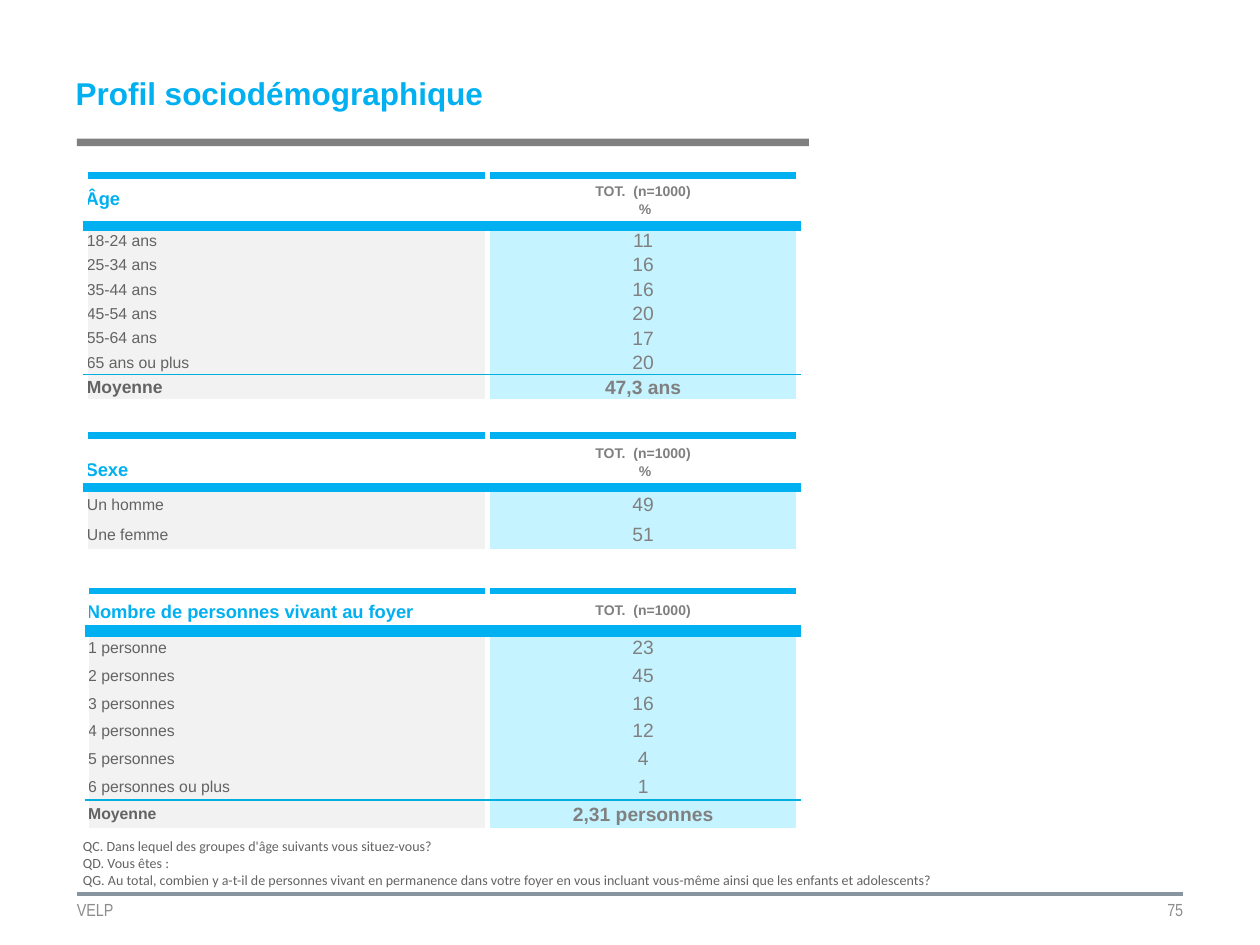
import pptx
import pptx.dml.color
import pptx.enum.shapes
import pptx.enum.text
import pptx.oxml.ns
import pptx.util
from dataclasses import dataclass
from typing import NamedTuple, Optional

from lxml import etree

COLS, ROWS = 1000, 750  # slide grid
CELL = pptx.util.Inches(0.01)
LEFT, RIGHT = 61, 939  # page margins, in grid columns
TABLE_RIGHT, VALUE_COLS = 634, 247
PLAIN_TABLE = "{2D5ABB26-0587-4C30-8999-92F81FD0307C}"
ALIGN = pptx.enum.text.PP_ALIGN
ANCHOR = pptx.enum.text.MSO_ANCHOR


class Style(NamedTuple):
    size: float
    color: str
    bold: bool = False
    font: str = "Arial"


class Border(NamedTuple):
    color: str
    width: float


@dataclass(frozen=True)
class Theme:
    title: Style = Style(18, "00B0F0", True)
    heading: Style = Style(10.5, "00B0F0", True)
    base: Style = Style(8, "7F7F7F", True)
    label: Style = Style(9, "636363")
    value: Style = Style(11, "808080")
    spacer: Style = Style(1, "636363")
    note: Style = Style(8, "636363", font="Calibri")
    footer: Style = Style(10, "8C8C8C", font="Arial Narrow")
    label_fill: str = "F2F2F2"
    value_fill: str = "C5F3FF"
    bar: str = "7F7F7F"
    rule: Border = Border("88959E", 1.5)
    gap: Border = Border("FFFFFF", 3)
    band: Border = Border("00B0F0", 4.5)
    total: Border = Border("00AFDC", 1)


class Box(NamedTuple):
    col: int
    row: int
    cols: int
    rows: int

    def emu(self) -> list[int]:
        return [n * CELL for n in self]


@dataclass(frozen=True)
class Profile:
    """One table; its lengths are in grid columns and rows."""
    heading: str
    base: list[str]
    answers: list[tuple[str, str]]
    left: int
    top: int
    head_rows: int
    spacer_rows: int
    answer_rows: int
    mean: Optional[tuple[str, str]] = None
    mean_rows: int = 0
    mean_size: float = 9
    anchor: ANCHOR = ANCHOR.BOTTOM


THEME = Theme()
BASE = "TOT.  (n=1000)"
PROFILES = [
    Profile("Âge", [BASE, " %"],
            [("18-24 ans", "11"), ("25-34 ans", "16"), ("35-44 ans", "16"),
             ("45-54 ans", "20"), ("55-64 ans", "17"), ("65 ans ou plus", "20")],
            68, 139, 39, 3, 18, ("Moyenne", "47,3 ans"), 19, 10, ANCHOR.MIDDLE),
    Profile("Sexe", [BASE, " %"], [("Un homme", "49"), ("Une femme", "51")],
            68, 346, 40, 2, 24),
    Profile("Nombre de personnes vivant au foyer", [BASE],
            [("1 personne", "23"), ("2 personnes", "45"), ("3 personnes", "16"),
             ("4 personnes", "12"), ("5 personnes", "4"), ("6 personnes ou plus", "1")],
            69, 469, 30, 4, 22, ("Moyenne", "2,31 personnes"), 22),
]
NOTES = [
    "QC. Dans lequel des groupes d'âge suivants vous situez-vous?",
    "QD. Vous êtes :",
    "QG. Au total, combien y a-t-il de personnes vivant en permanence dans votre foyer "
    "en vous incluant vous-même ainsi que les enfants et adolescents?",
]


def rgb(color: str) -> pptx.dml.color.RGBColor:
    return pptx.dml.color.RGBColor.from_string(color)


def write(tf, lines: list[str], style: Style, align=ALIGN.LEFT, spacing: float = 1.0) -> None:
    for i, line in enumerate(lines):
        p = tf.paragraphs[0] if i == 0 else tf.add_paragraph()
        p.alignment, p.line_spacing = align, spacing
        p.space_before = p.space_after = pptx.util.Pt(0)
        p.font.name, p.font.bold = style.font, style.bold
        p.font.size = pptx.util.Pt(style.size)
        p.font.color.rgb = rgb(style.color)
        if line:
            p.add_run().text = line


def set_margins(target, left: float, top: float, right: float, bottom: float) -> None:
    target.margin_left, target.margin_top = pptx.util.Inches(left), pptx.util.Inches(top)
    target.margin_right, target.margin_bottom = pptx.util.Inches(right), pptx.util.Inches(bottom)


def prepare_frame(sp, box: Box) -> None:
    """Place a text shape; wrapped, centred vertically, without margins."""
    sp.left, sp.top, sp.width, sp.height = box.emu()
    sp.text_frame.word_wrap = True
    sp.text_frame.vertical_anchor = ANCHOR.MIDDLE
    set_margins(sp.text_frame, 0, 0, 0, 0)


def add_text(slide, box: Box, lines: list[str], style: Style, align=ALIGN.LEFT):
    sp = slide.shapes.add_textbox(*box.emu())
    prepare_frame(sp, box)
    write(sp.text_frame, lines, style, align)
    return sp


def add_rule(slide, row: int) -> None:
    line = slide.shapes.add_connector(pptx.enum.shapes.MSO_CONNECTOR.STRAIGHT,
                                      LEFT * CELL, row * CELL, RIGHT * CELL, row * CELL)
    line.line.color.rgb = rgb(THEME.rule.color)
    line.line.width = pptx.util.Pt(THEME.rule.width)
    etree.SubElement(line._element.spPr, pptx.oxml.ns.qn("a:effectLst"))


def format_cell(cell, fill: Optional[str], top: Optional[Border] = None,
                bottom: Optional[Border] = None) -> None:
    qn = pptx.oxml.ns.qn
    tc_pr = cell._tc.get_or_add_tcPr()
    for side, border in zip("LRTB", (THEME.gap, THEME.gap, top, bottom)):
        if border:
            ln = etree.SubElement(tc_pr, qn(f"a:ln{side}"), w=str(pptx.util.Pt(border.width)))
            solid = etree.SubElement(ln, qn("a:solidFill"))
            etree.SubElement(solid, qn("a:srgbClr"), val=border.color)
    if fill:
        cell.fill.solid()
        cell.fill.fore_color.rgb = rgb(fill)
    else:
        cell.fill.background()


def add_profile(slide, profile: Profile) -> None:
    body = profile.answers + ([profile.mean] if profile.mean else [])
    heights = [profile.head_rows, profile.spacer_rows]
    heights += [profile.answer_rows] * len(profile.answers)
    heights += [profile.mean_rows] if profile.mean else []
    box = Box(profile.left, profile.top, TABLE_RIGHT - profile.left, sum(heights))
    table = slide.shapes.add_table(len(heights), 2, *box.emu()).table
    table.first_row = table.horz_banding = False
    table._tbl.tblPr.find(pptx.oxml.ns.qn("a:tableStyleId")).text = PLAIN_TABLE
    for column, cols in zip(table.columns, (box.cols - VALUE_COLS, VALUE_COLS)):
        column.width = cols * CELL
    for row, rows in zip(table.rows, heights):
        row.height = rows * CELL

    heading, base = table.rows[0].cells
    write(heading.text_frame, [profile.heading], THEME.heading, spacing=0.95)
    write(base.text_frame, profile.base, THEME.base, ALIGN.CENTER, 1.15)
    set_margins(heading, 0, 0.05, 0, 0.05)
    set_margins(base, 0, 0, 0, 0)
    heading.vertical_anchor, base.vertical_anchor = profile.anchor, ANCHOR.MIDDLE
    for cell in (heading, base):
        format_cell(cell, None, THEME.band, THEME.band)
    for cell, fill in zip(table.rows[1].cells, (THEME.label_fill, THEME.value_fill)):
        write(cell.text_frame, [""], THEME.spacer)
        set_margins(cell, 0, 0, 0, 0)
        format_cell(cell, fill, THEME.band)

    for i, texts in enumerate(body):
        is_mean = texts is profile.mean
        before_mean = profile.mean is not None and i == len(body) - 2
        label = THEME.label._replace(bold=is_mean,
                                     size=profile.mean_size if is_mean else THEME.label.size)
        looks = ((label, ALIGN.LEFT, THEME.label_fill),
                 (THEME.value._replace(bold=is_mean), ALIGN.CENTER, THEME.value_fill))
        for cell, text, (style, align, fill) in zip(table.rows[i + 2].cells, texts, looks):
            write(cell.text_frame, [text], style, align)
            set_margins(cell, 0.01, 0.01, 0.01, 0)
            cell.vertical_anchor = ANCHOR.MIDDLE
            format_cell(cell, fill, THEME.total if is_mean else None,
                        THEME.total if before_mean else None)


def main() -> None:
    prs = pptx.Presentation()
    prs.slide_width, prs.slide_height = COLS * CELL, ROWS * CELL
    slide = prs.slides.add_slide(prs.slide_layouts[5])
    title = slide.shapes.title
    prepare_frame(title, Box(60, 44, 580, 60))
    write(title.text_frame, ["Profil sociodémographique"], THEME.title)

    for row in (709, 710):
        add_rule(slide, row)
    add_text(slide, Box(LEFT, 709, 280, 26), ["VELP"], THEME.footer)
    add_text(slide, Box(655, 709, 284, 26), ["75"], THEME.footer, ALIGN.RIGHT)

    bar = slide.shapes.add_shape(pptx.enum.shapes.MSO_SHAPE.RECTANGLE,
                                 *Box(LEFT, 110, 581, 6).emu())
    bar.shadow.inherit = False
    bar.fill.solid()
    bar.fill.fore_color.rgb = rgb(THEME.bar)
    bar.line.fill.background()

    notes = add_text(slide, Box(56, 660, 871, 77), NOTES, THEME.note)
    notes.text_frame.vertical_anchor = ANCHOR.TOP
    set_margins(notes.text_frame, 0.1, 0.05, 0.1, 0.05)
    for profile in PROFILES:
        add_profile(slide, profile)
    prs.save("out.pptx")


if __name__ == "__main__":
    main()
